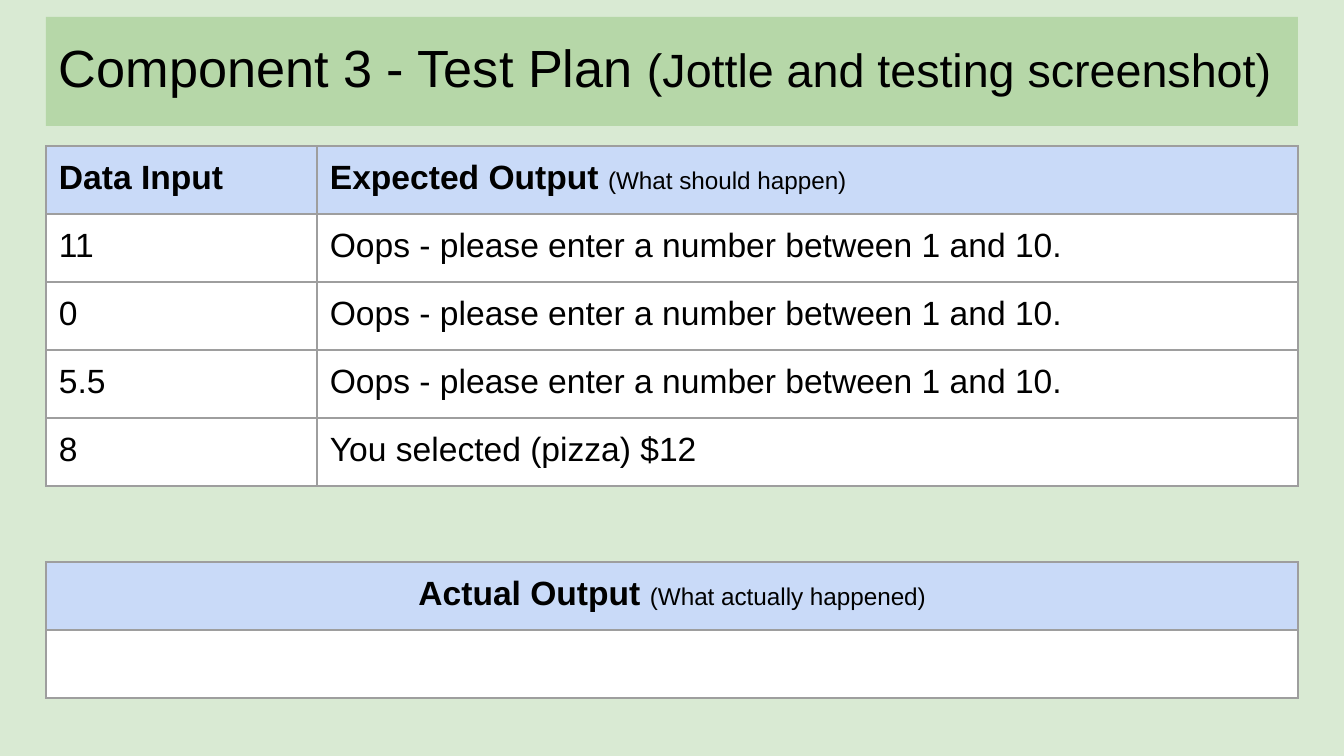
from pptx import Presentation
from pptx.dml.color import RGBColor
from pptx.enum.text import MSO_ANCHOR, MSO_AUTO_SIZE, PP_ALIGN
from pptx.util import Inches, Pt
from lxml import etree

PX = Inches(10) / 1344
LEFT, WIDTH, ROW_HEIGHT, INSET = 46, 1252, 68, 13
COLORS = {
    "background": "D9EAD3",
    "title": "B6D7A8",
    "header": "C9DAF8",
    "body": "FFFFFF",
    "border": "9E9E9E",
    "text": "000000",
}
NAMESPACE = "http://schemas.openxmlformats.org/drawingml/2006/main"


def add_text(paragraph, text, size=18, bold=False, align=PP_ALIGN.LEFT):
    paragraph.alignment = align
    run = paragraph.add_run()
    run.text = text
    run.font.name = "Arial"
    run.font.size = Pt(size)
    run.font.bold = bold
    run.font.color.rgb = RGBColor.from_string(COLORS["text"])


def add_grid(slide, top, column_widths, rows, header_align=PP_ALIGN.LEFT):
    """Add a table; each cell is a list of (text, size, bold) runs."""
    frame = slide.shapes.add_table(
        len(rows), len(column_widths), round(LEFT * PX), round(top * PX),
        round(sum(column_widths) * PX), round(len(rows) * ROW_HEIGHT * PX))
    table = frame.table
    for column, width in zip(table.columns, column_widths):
        column.width = round(width * PX)
    for row_index, row in enumerate(rows):
        table.rows[row_index].height = round(ROW_HEIGHT * PX)
        for column_index, runs in enumerate(row):
            cell = table.cell(row_index, column_index)
            cell.margin_left = cell.margin_right = round(INSET * PX)
            cell.margin_top = cell.margin_bottom = round(INSET * PX)
            # Borders go before the fill in the cell properties
            properties = cell._tc.get_or_add_tcPr()
            for side in ("lnL", "lnR", "lnT", "lnB"):
                line = etree.SubElement(
                    properties, f"{{{NAMESPACE}}}{side}", w=str(Pt(0.75)))
                fill = etree.SubElement(line, f"{{{NAMESPACE}}}solidFill")
                etree.SubElement(
                    fill, f"{{{NAMESPACE}}}srgbClr", val=COLORS["border"])
            cell.fill.solid()
            cell.fill.fore_color.rgb = RGBColor.from_string(
                COLORS["body" if row_index else "header"])
            align = PP_ALIGN.LEFT if row_index else header_align
            for text, size, bold in runs:
                add_text(cell.text_frame.paragraphs[0], text,
                         size=size, bold=bold, align=align)


presentation = Presentation()
presentation.slide_width = round(1344 * PX)
presentation.slide_height = round(756 * PX)
slide = presentation.slides.add_slide(presentation.slide_layouts[5])
slide.background.fill.solid()
slide.background.fill.fore_color.rgb = RGBColor.from_string(COLORS["background"])

# Title
title = slide.shapes.title
title.left, title.top = round(LEFT * PX), round(17 * PX)
title.width, title.height = round(WIDTH * PX), round(109 * PX)
title.fill.solid()
title.fill.fore_color.rgb = RGBColor.from_string(COLORS["title"])
title_frame = title.text_frame
title_frame.word_wrap = True
title_frame.auto_size = MSO_AUTO_SIZE.NONE
title_frame.vertical_anchor = MSO_ANCHOR.TOP
title_frame.margin_left = title_frame.margin_right = round(INSET * PX)
title_frame.margin_top = round(18 * PX)
title_frame.margin_bottom = round(INSET * PX)
add_text(title_frame.paragraphs[0], "Component 3 - Test Plan ", size=28)
add_text(title_frame.paragraphs[0], "(Jottle and testing screenshot)", size=25)

# Test plan table
range_error = "Oops - please enter a number between 1 and 10."
tests = [
    ("11", range_error),
    ("0", range_error),
    ("5.5", range_error),
    ("8", "You selected (pizza) $12"),
]
plan_header = [
    [("Data Input", 18, True)],
    [("Expected Output ", 18, True), ("(What should happen)", 13, False)],
]
plan_rows = [[[(text, 18, False)] for text in test] for test in tests]
add_grid(slide, 146, [271, WIDTH - 271], [plan_header] + plan_rows)

# Actual output table, left open for the result
actual_header = [[("Actual Output ", 18, True),
                  ("(What actually happened)", 13, False)]]
add_grid(slide, 562, [WIDTH], [actual_header, [[]]],
         header_align=PP_ALIGN.CENTER)

presentation.save("out.pptx")
